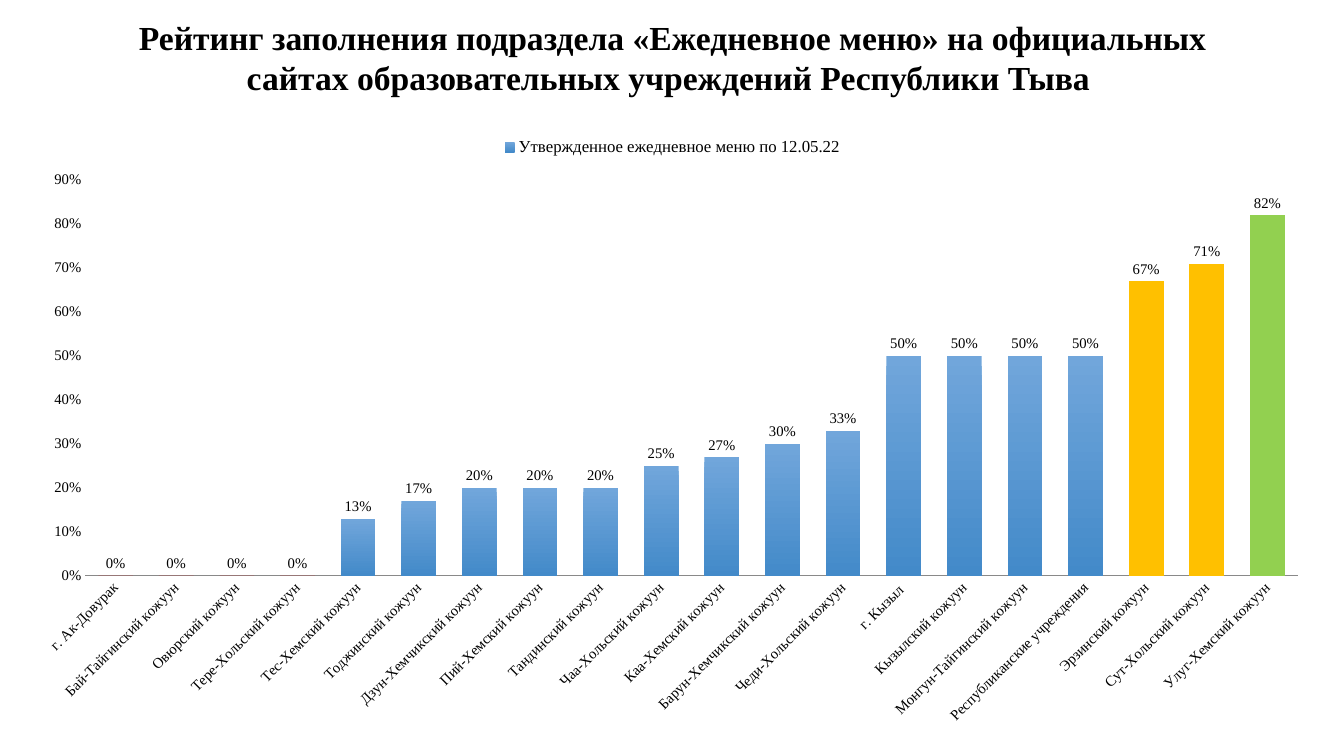
from pptx import Presentation
from pptx.chart.data import CategoryChartData
from pptx.dml.color import RGBColor
from pptx.enum.chart import XL_CHART_TYPE, XL_LABEL_POSITION, XL_LEGEND_POSITION, XL_TICK_MARK
from pptx.enum.text import MSO_AUTO_SIZE, PP_ALIGN
from pptx.util import Inches, Pt

COLORS = {
    "text": "000000",
    "axis": "898989",
    "top": "71A6DB",
    "base": "438AC9",
    "low": "FF0000",
    "good": "FFC000",
    "best": "92D050",
}
TITLE = (
    "Рейтинг заполнения подраздела «Ежедневное меню» на официальных "
    "сайтах образовательных учреждений Республики Тыва "
)
SERIES = "Утвержденное ежедневное меню по 12.05.22"
RATING = [
    ("г. Ак-Довурак", 0),
    ("Бай-Тайгинский кожуун", 0),
    ("Овюрский кожуун", 0),
    ("Тере-Хольский кожуун", 0),
    ("Тес-Хемский кожуун", 0.13),
    ("Тоджинский кожуун", 0.17),
    ("Дзун-Хемчикский кожуун", 0.2),
    ("Пий-Хемский кожуун", 0.2),
    ("Тандинский кожуун", 0.2),
    ("Чаа-Хольский кожуун", 0.25),
    ("Каа-Хемский кожуун", 0.27),
    ("Барун-Хемчикский кожуун", 0.3),
    ("Чеди-Хольский кожуун", 0.33),
    ("г. Кызыл ", 0.5),
    ("Кызылский кожуун", 0.5),
    ("Монгун-Тайгинский кожуун", 0.5),
    ("Республиканские учреждения", 0.5),
    ("Эрзинский кожуун", 0.67),
    ("Сут-Хольский кожуун", 0.71),
    ("Улуг-Хемский кожуун", 0.82),
]


def color(name):
    return RGBColor.from_string(COLORS[name])


def grade(value):
    if value == 0:
        return "low"
    if value > 0.8:
        return "best"
    return "good" if value > 0.5 else None


class Deck:
    face = "Times New Roman"

    def __init__(self, width, height):
        self.deck = Presentation()
        self.deck.slide_width = Inches(width)
        self.deck.slide_height = Inches(height)
        self.slide = self.deck.slides.add_slide(self.deck.slide_layouts[6])

    def style(self, font, size, bold=False):
        font.name = self.face
        font.size = Pt(size)
        font.bold = bold
        font.color.rgb = color("text")

    def title(self, text, box, size):
        frame = self.slide.shapes.add_textbox(*map(Inches, box)).text_frame
        frame.word_wrap = True
        frame.auto_size = MSO_AUTO_SIZE.SHAPE_TO_FIT_TEXT
        frame.text = text
        line = frame.paragraphs[0]
        line.alignment = PP_ALIGN.CENTER
        self.style(line.runs[0].font, size, True)

    def columns(self, name, rows, box):
        data = CategoryChartData(number_format="0%")
        data.categories = [label for label, value in rows]
        data.add_series(name, [value for label, value in rows])
        chart = self.slide.shapes.add_chart(
            XL_CHART_TYPE.COLUMN_CLUSTERED, *map(Inches, box), data
        ).chart
        self.style(chart.font, 10.5)
        chart.has_title = False
        chart.has_legend = True
        chart.legend.position = XL_LEGEND_POSITION.TOP
        chart.legend.include_in_layout = False
        self.style(chart.legend.font, 12)
        self.axes(chart)
        self.bars(chart.plots[0], rows)

    def axes(self, chart):
        for axis in (chart.category_axis, chart.value_axis):
            axis.major_tick_mark = XL_TICK_MARK.NONE
            axis.minor_tick_mark = XL_TICK_MARK.NONE
            axis.has_major_gridlines = False
            self.style(axis.tick_labels.font, 10.5)
        base, scale = chart.category_axis, chart.value_axis
        base.format.line.color.rgb = color("axis")
        base.format.line.width = Pt(0.75)
        turn = base._element.find("{*}txPr/{*}bodyPr")
        turn.set("rot", "-2700000")
        turn.set("vert", "horz")
        scale.format.line.fill.background()
        scale.minimum_scale = 0
        scale.maximum_scale = 0.9
        scale.major_unit = 0.1
        scale.tick_labels.number_format = "0%"
        scale.tick_labels.number_format_is_linked = False

    def bars(self, plot, rows):
        plot.gap_width = 75
        plot.overlap = -25
        plot.vary_by_categories = False
        series = plot.series[0]
        series.invert_if_negative = False
        fill = series.format.fill
        fill.gradient()
        fill.gradient_angle = 270
        for stop, name in zip(fill.gradient_stops, ("top", "base")):
            stop.color.rgb = color(name)
        for index, (label, value) in enumerate(rows):
            mark = grade(value)
            if mark:
                paint = series.points[index].format.fill
                paint.solid()
                paint.fore_color.rgb = color(mark)
        labels = series.data_labels
        labels.show_value = True
        labels.number_format = "0%"
        labels.number_format_is_linked = False
        labels.position = XL_LABEL_POSITION.OUTSIDE_END
        self.style(labels.font, 10.5)


def main():
    page = Deck(13.33, 7.5)
    page.columns(SERIES, RATING, (0.21, 1.26, 12.92, 6.04))
    page.title(TITLE, (1.01, 0.12, 11.32, 0.91), 24)
    page.deck.save("out.pptx")


if __name__ == "__main__":
    main()
